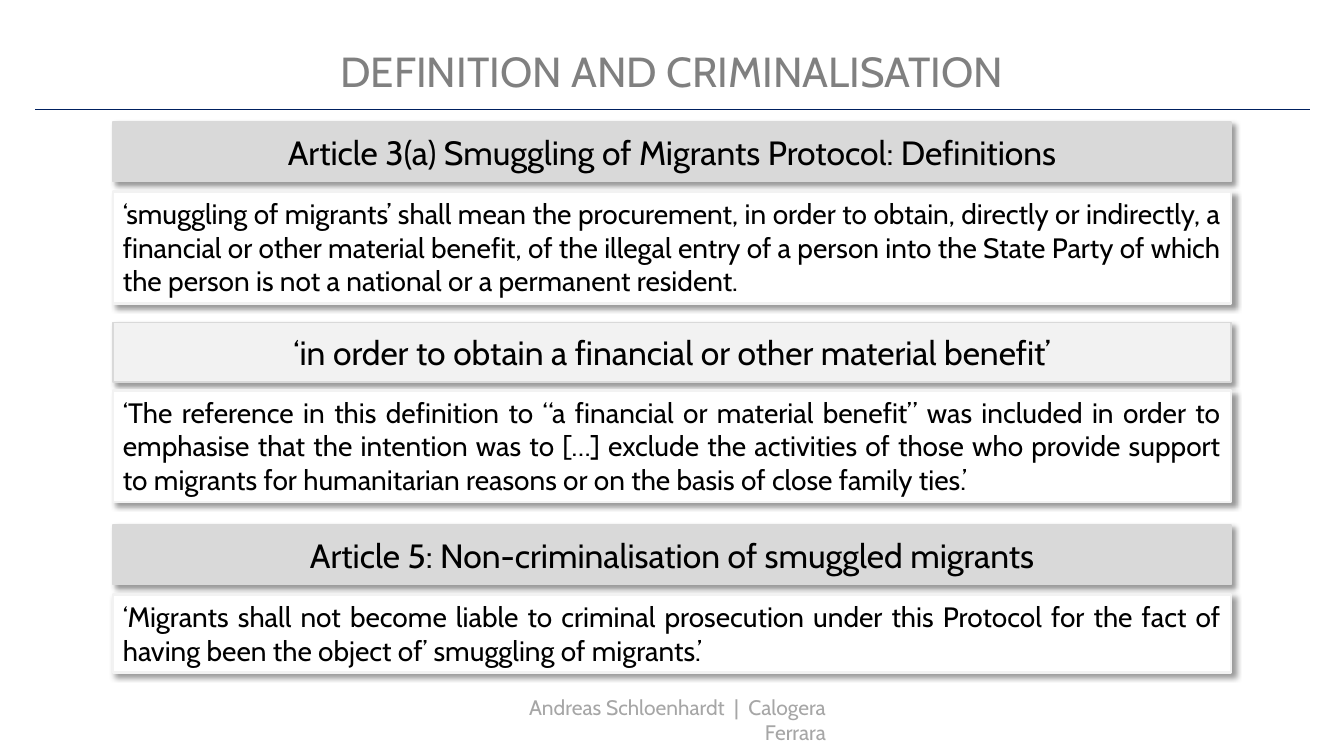
"""Build the slide on the definition and criminalisation of migrant smuggling."""
from dataclasses import dataclass

from lxml import etree
from pptx import Presentation
from pptx.dml.color import RGBColor
from pptx.enum.shapes import MSO_CONNECTOR, MSO_SHAPE
from pptx.enum.text import MSO_ANCHOR, MSO_AUTO_SIZE, PP_ALIGN
from pptx.oxml import parse_xml
from pptx.oxml.ns import nsdecls, qn
from pptx.util import Inches, Pt

FONT = "Cabin"
LEFT, WIDTH = 1.12, 11.09
HEADING_HEIGHT = 0.59
SHADOW = (
    f'<a:effectLst {nsdecls("a")}>'
    f'<a:outerShdw blurRad="{Pt(4)}" dist="{Pt(3)}" dir="2700000" algn="tl" rotWithShape="0">'
    '<a:srgbClr val="000000"><a:alpha val="40000"/></a:srgbClr>'
    '</a:outerShdw></a:effectLst>'
)


@dataclass
class Section:
    top: float
    heading: str
    fill: str
    body_top: float
    body_height: float
    body: str


SECTIONS = [
    Section(1.21, "Article 3(a) Smuggling of Migrants Protocol: Definitions", "D9D9D9", 1.9, 1.11,
            "‘smuggling of migrants’ shall mean the procurement, in order to obtain, directly or "
            "indirectly, a financial or other material benefit, of the illegal entry of a person "
            "into the State Party of which the person is not a national or a permanent resident."),
    Section(3.2, "‘in order to obtain a financial or other material benefit’", "F2F2F2", 3.87, 1.11,
            "‘The reference in this definition to “a financial or material benefit” was included "
            "in order to emphasise that the intention was to […] exclude the activities of those "
            "who provide support to migrants for humanitarian reasons or on the basis of close "
            "family ties.’"),
    Section(5.21, "Article 5: Non-criminalisation of smuggled migrants", "D9D9D9", 5.9, 0.77,
            "‘Migrants shall not become liable to criminal prosecution under this Protocol for "
            "the fact of having been the object of’ smuggling of migrants.’"),
]


def rgb(color: str) -> RGBColor:
    """Turn a hex string into a colour."""
    return RGBColor.from_string(color)


def place(sp, left: float, top: float, width: float, height: float) -> None:
    """Move and size a shape, in inches."""
    sp.left, sp.top = Inches(left), Inches(top)
    sp.width, sp.height = Inches(width), Inches(height)


def write(sp, text: str, size: int, color: str, align: PP_ALIGN,
          anchor: MSO_ANCHOR = MSO_ANCHOR.TOP, wrap: bool = True) -> None:
    """Fill a shape with one formatted paragraph."""
    tf = sp.text_frame
    tf.text = text
    tf.word_wrap = wrap
    tf.auto_size = MSO_AUTO_SIZE.NONE
    tf.vertical_anchor = anchor
    p = tf.paragraphs[0]
    p.alignment = align
    p.font.name, p.font.size = FONT, Pt(size)
    p.font.color.rgb = rgb(color)


def add_panel(s, top: float, height: float, fill: str, line: str, line_width: float):
    """Add a full-width rectangle with a soft shadow."""
    sp = s.shapes.add_shape(MSO_SHAPE.RECTANGLE, Inches(LEFT), Inches(top),
                            Inches(WIDTH), Inches(height))
    sp.fill.solid()
    sp.fill.fore_color.rgb = rgb(fill)
    sp.line.color.rgb = rgb(line)
    sp.line.width = Pt(line_width)
    sp._element.spPr.append(parse_xml(SHADOW))
    return sp


def add_section(s, section: Section) -> None:
    """Add a heading bar and the quotation below it."""
    heading = add_panel(s, section.top, HEADING_HEIGHT, section.fill, "D9D9D9", 1)
    write(heading, section.heading, 24, "000000", PP_ALIGN.CENTER, MSO_ANCHOR.MIDDLE)
    body = add_panel(s, section.body_top, section.body_height, "FFFFFF", "F2F2F2", 2)
    write(body, section.body, 20, "000000", PP_ALIGN.JUSTIFY)


def add_rule(s) -> None:
    """Add the thin line below the title."""
    rule = s.shapes.add_connector(MSO_CONNECTOR.STRAIGHT, Inches(0.35), Inches(1.09),
                                  Inches(12.99), Inches(1.09))
    rule.line.color.rgb = rgb("002060")
    rule.line.width = Pt(0.5)
    etree.SubElement(rule._element.spPr, qn("a:effectLst"))


def main() -> None:
    """Build and save the slide."""
    prs = Presentation()
    prs.slide_width, prs.slide_height = Inches(13.33), Inches(7.5)
    s = prs.slides.add_slide(prs.slide_layouts[5])
    title = s.shapes.title
    place(title, 3.25, 0.4, 6.83, 0.61)
    write(title, "DEFINITION AND CRIMINALISATION", 30, "808080", PP_ALIGN.CENTER, wrap=False)
    add_rule(s)
    footer = s.shapes.add_textbox(Inches(4.59), Inches(6.84), Inches(3.7), Inches(0.35))
    write(footer, "Andreas Schloenhardt  |  Calogera Ferrara", 15, "A6A6A6", PP_ALIGN.RIGHT)
    for section in SECTIONS:
        add_section(s, section)
    prs.save("out.pptx")


if __name__ == "__main__":
    main()
